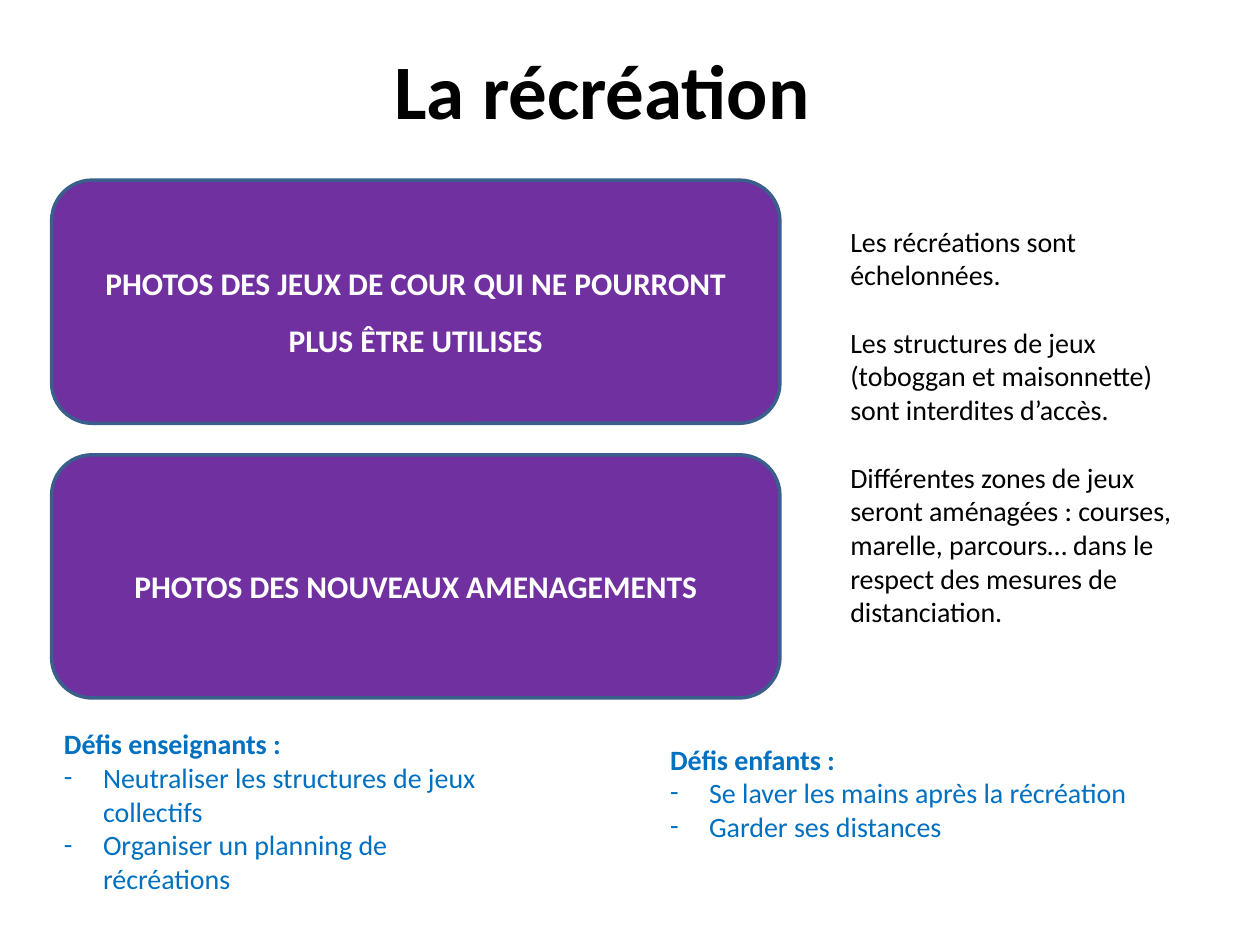
from dataclasses import dataclass

from lxml.etree import SubElement
from pptx import Presentation
from pptx.dml.color import RGBColor
from pptx.enum.shapes import MSO_SHAPE
from pptx.enum.text import MSO_ANCHOR, PP_ALIGN
from pptx.oxml.ns import qn
from pptx.util import Inches, Pt


@dataclass(frozen=True)
class Theme:
    font: str = "Calibri"
    ink: RGBColor = RGBColor(0x00, 0x00, 0x00)
    light: RGBColor = RGBColor(0xFF, 0xFF, 0xFF)
    challenge: RGBColor = RGBColor(0x00, 0x70, 0xC0)
    panel: RGBColor = RGBColor(0x70, 0x30, 0xA0)
    panel_line: RGBColor = RGBColor(0x3A, 0x5F, 0x8C)
    title_size: Pt = Pt(44)
    panel_size: Pt = Pt(18)
    body_size: Pt = Pt(16)
    body_gap: Pt = Pt(19.5)


THEME = Theme()


def format_runs(para, size, color, bold=False):
    for span in para.runs:
        span.font.name = THEME.font
        span.font.size = size
        span.font.color.rgb = color
        span.font.bold = bold


def add_dash(para, indent=Inches(0.31)):
    """Hang the paragraph behind a dash bullet."""
    properties = para._p.get_or_add_pPr()
    properties.set("marL", str(indent))
    properties.set("indent", str(-indent))
    SubElement(properties, qn("a:buFont"), typeface=THEME.font)
    SubElement(properties, qn("a:buChar"), char="-")


def add_text_frame(page, box):
    frame = page.shapes.add_textbox(*box).text_frame
    frame.word_wrap = True
    return frame


def place_title(page, box, text):
    title = page.shapes.title
    title.left, title.top, title.width, title.height = box
    frame = title.text_frame
    frame.text = text
    frame.vertical_anchor = MSO_ANCHOR.TOP
    para = frame.paragraphs[0]
    para.alignment = PP_ALIGN.CENTER
    format_runs(para, THEME.title_size, THEME.ink, bold=True)


def add_panels(page, box, labels, gap):
    """Stack equal rounded panels in the box, one for each label."""
    left, top, width, height = box
    panel_height = (height - gap * (len(labels) - 1)) // len(labels)
    for index, label in enumerate(labels):
        panel_top = top + index * (panel_height + gap)
        panel = page.shapes.add_shape(
            MSO_SHAPE.ROUNDED_RECTANGLE, left, panel_top, width, panel_height)
        panel.shadow.inherit = False
        panel.fill.solid()
        panel.fill.fore_color.rgb = THEME.panel
        panel.line.color.rgb = THEME.panel_line
        panel.line.width = Pt(2)
        frame = panel.text_frame
        frame.text = label
        frame.word_wrap = True
        frame.vertical_anchor = MSO_ANCHOR.MIDDLE
        para = frame.paragraphs[0]
        para.alignment = PP_ALIGN.CENTER
        para.line_spacing = 1.5
        format_runs(para, THEME.panel_size, THEME.light, bold=True)


def add_rules(page, box, rules):
    frame = add_text_frame(page, box)
    frame.text = "\n".join(rules)
    for para in frame.paragraphs:
        para.space_after = THEME.body_gap
        format_runs(para, THEME.body_size, THEME.ink)


def add_challenges(page, box, heading, challenges):
    frame = add_text_frame(page, box)
    frame.text = "\n".join([heading, *challenges])
    heading_para, *challenge_paras = frame.paragraphs
    format_runs(heading_para, THEME.body_size, THEME.challenge, bold=True)
    for para in challenge_paras:
        add_dash(para)
        format_runs(para, THEME.body_size, THEME.challenge)


def main():
    deck = Presentation()
    deck.slide_width, deck.slide_height = Inches(10), Inches(7.5)
    page = deck.slides.add_slide(deck.slide_layouts[5])

    # Title
    place_title(page, (Inches(0.96), Inches(0.29), Inches(7.64), Inches(0.84)),
                "La récréation")

    # Rules beside the panels
    add_rules(page, (Inches(6.65), Inches(1.73), Inches(2.99), Inches(3.33)), [
        "Les récréations sont échelonnées.",
        "Les structures de jeux (toboggan et maisonnette) sont interdites d’accès.",
        "Différentes zones de jeux seront aménagées : courses, marelle, "
        "parcours… dans le respect des mesures de distanciation.",
    ])

    # Challenges along the bottom
    add_challenges(
        page, (Inches(0.41), Inches(5.72), Inches(3.7), Inches(1.45)),
        "Défis enseignants :",
        ["Neutraliser les structures de jeux collectifs",
         "Organiser un planning de récréations"])
    add_challenges(
        page, (Inches(5.22), Inches(5.84), Inches(4.17), Inches(0.91)),
        "Défis enfants :",
        ["Se laver les mains après la récréation", "Garder ses distances"])

    # Photo panels
    add_panels(
        page, (Inches(0.41), Inches(1.43), Inches(5.78), Inches(4.11)),
        ["PHOTOS DES JEUX DE COUR QUI NE POURRONT PLUS ÊTRE UTILISES",
         "PHOTOS DES NOUVEAUX AMENAGEMENTS"],
        gap=Inches(0.25))

    deck.save("out.pptx")


if __name__ == "__main__":
    main()
